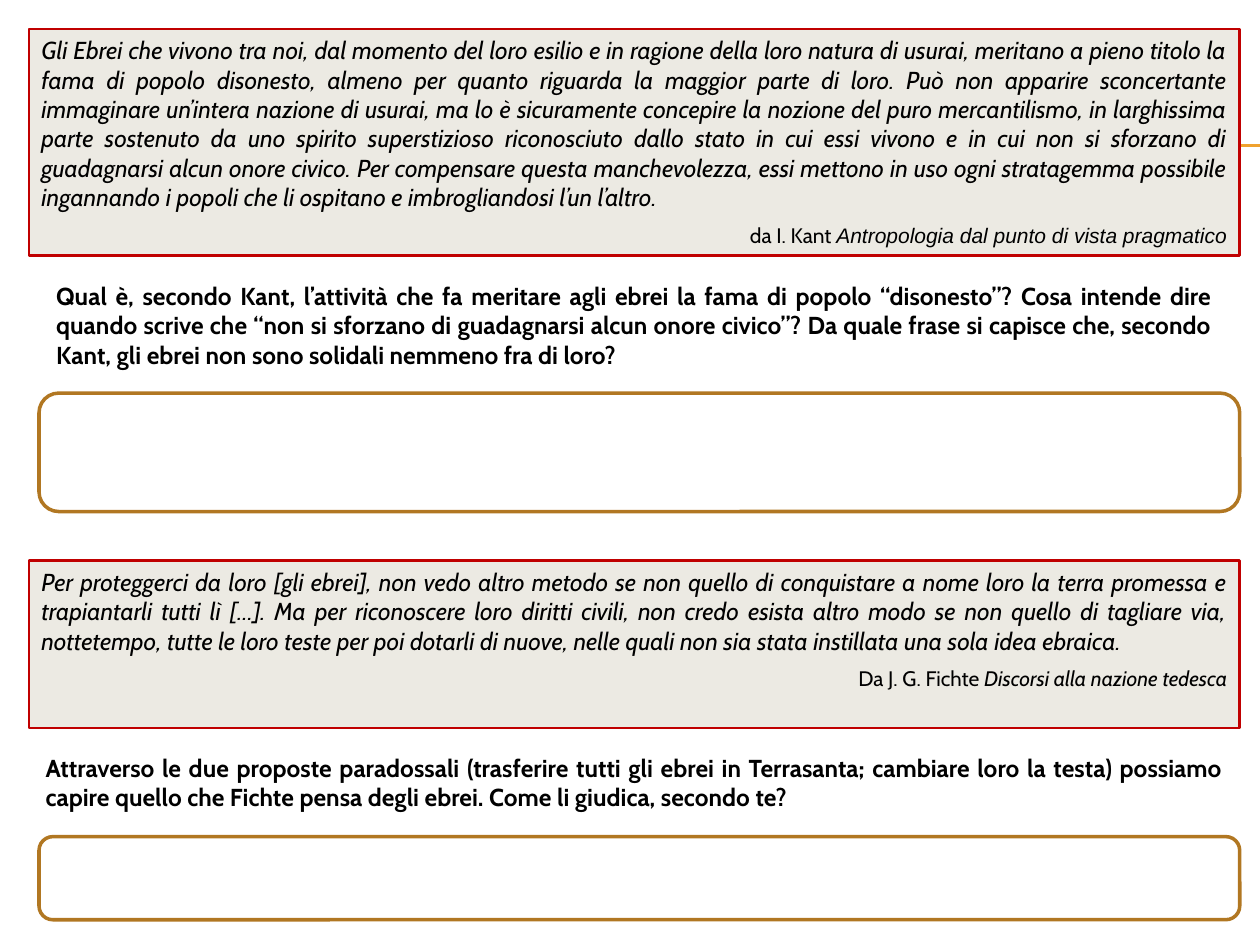
from dataclasses import dataclass

from lxml.etree import SubElement
from pptx import Presentation
from pptx.dml.color import RGBColor
from pptx.enum.shapes import MSO_CONNECTOR, MSO_SHAPE
from pptx.enum.text import MSO_ANCHOR, PP_ALIGN
from pptx.oxml.ns import qn
from pptx.util import Inches, Pt

BLACK = RGBColor(0x00, 0x00, 0x00)
WHITE = RGBColor(0xFF, 0xFF, 0xFF)
BEIGE = RGBColor(0xEC, 0xEA, 0xE3)
RED = RGBColor(0xC0, 0x00, 0x00)
BROWN = RGBColor(0xB1, 0x77, 0x22)
AMBER = RGBColor(0xF0, 0xA2, 0x2E)

QUOTE = {"name": "Cabin", "size": Pt(14), "italic": True}
QUESTION = {"name": "Cabin", "size": Pt(14), "bold": True}
AUTHOR = {"name": "Cabin", "size": Pt(12), "italic": False}


@dataclass
class Box:
    left: float
    top: float
    width: float
    height: float


@dataclass
class Exercise:
    quote_box: Box
    quote: str
    author: str
    work: str
    work_font: str
    question_box: Box
    question: str
    answer_box: Box


EXERCISES = [
    Exercise(
        Box(0.23, 0.23, 9.61, 1.8),
        "Gli Ebrei che vivono tra noi, dal momento del loro esilio e in ragione della loro "
        "natura di usurai, meritano a pieno titolo la fama di popolo disonesto, almeno per "
        "quanto riguarda la maggior parte di loro. Può non apparire sconcertante immaginare "
        "un’intera nazione di usurai, ma lo è sicuramente concepire la nozione del puro "
        "mercantilismo, in larghissima parte sostenuto da uno spirito superstizioso "
        "riconosciuto dallo stato in cui essi vivono e in cui non si sforzano di guadagnarsi "
        "alcun onore civico. Per compensare questa manchevolezza, essi mettono in uso ogni "
        "stratagemma possibile ingannando i popoli che li ospitano e imbrogliandosi l’un "
        "l’altro.",
        "da I. Kant ",
        "Antropologia dal punto di vista pragmatico",
        "Arial",
        Box(0.31, 2.19, 9.45, 0.78),
        "Qual è, secondo Kant, l’attività che fa meritare agli ebrei la fama di popolo "
        "“disonesto”? Cosa intende dire quando scrive che “non si sforzano di guadagnarsi "
        "alcun onore civico”? Da quale frase si capisce che, secondo Kant, gli ebrei non "
        "sono solidali nemmeno fra di loro?",
        Box(0.31, 3.12, 9.53, 0.94),
    ),
    Exercise(
        Box(0.23, 4.45, 9.61, 1.33),
        "Per proteggerci da loro [gli ebrei], non vedo altro metodo se non quello di "
        "conquistare a nome loro la terra promessa e trapiantarli tutti lì […]. Ma per "
        "riconoscere loro diritti civili, non credo esista altro modo se non quello di "
        "tagliare via, nottetempo, tutte le loro teste per poi dotarli di nuove, nelle "
        "quali non sia stata instillata una sola idea ebraica.",
        "Da J. G. Fichte ",
        "Discorsi alla nazione tedesca",
        "Cabin",
        Box(0.23, 5.86, 9.61, 0.7),
        "Attraverso le due proposte paradossali (trasferire tutti gli ebrei in Terrasanta; "
        "cambiare loro la testa) possiamo capire quello che Fichte pensa degli ebrei. Come "
        "li giudica, secondo te?",
        Box(0.31, 6.64, 9.53, 0.66),
    ),
]


def add_box(s, kind: MSO_SHAPE, box: Box, fill: RGBColor | None = None,
            line: RGBColor | None = None, weight: float = 0):
    sp = s.shapes.add_shape(kind, Inches(box.left), Inches(box.top),
                            Inches(box.width), Inches(box.height))
    sp.shadow.inherit = False
    if fill is None:
        sp.fill.background()
    else:
        sp.fill.solid()
        sp.fill.fore_color.rgb = fill
    if line is None:
        sp.line.fill.background()
    else:
        sp.line.color.rgb = line
        sp.line.width = Pt(weight)
    return sp


def add_run(p, text: str, fmt: dict) -> None:
    r = p.add_run()
    r.text = text
    r.font.color.rgb = BLACK
    for name, value in fmt.items():
        setattr(r.font, name, value)


def add_quote(s, ex: Exercise) -> None:
    sp = add_box(s, MSO_SHAPE.RECTANGLE, ex.quote_box, BEIGE, RED, 1.5)
    tf = sp.text_frame
    tf.word_wrap = True
    tf.vertical_anchor = MSO_ANCHOR.TOP
    p, source = tf.paragraphs[0], tf.add_paragraph()
    p.alignment, source.alignment = PP_ALIGN.JUSTIFY, PP_ALIGN.RIGHT
    p.space_after = source.space_after = Pt(6)
    add_run(p, ex.quote, QUOTE)
    add_run(source, ex.author, AUTHOR)
    add_run(source, ex.work, AUTHOR | {"name": ex.work_font, "italic": True})


def add_question(s, ex: Exercise) -> None:
    tf = add_box(s, MSO_SHAPE.ROUNDED_RECTANGLE, ex.question_box).text_frame
    tf.word_wrap = True
    tf.vertical_anchor = MSO_ANCHOR.MIDDLE
    p = tf.paragraphs[0]
    p.alignment = PP_ALIGN.JUSTIFY
    add_run(p, ex.question, QUESTION)


def add_rule(s, y: float) -> None:
    """Draw a thin amber line that runs to the right edge of the slide."""
    cn = s.shapes.add_connector(MSO_CONNECTOR.STRAIGHT, Inches(0.56), Inches(y),
                                Inches(10), Inches(y))
    cn.line.color.rgb = AMBER
    cn.line.width = Pt(0.75)
    SubElement(cn._element.spPr, qn("a:effectLst"))


def main() -> None:
    prs = Presentation()
    prs.slide_width, prs.slide_height = Inches(10), Inches(7.5)
    s = prs.slides.add_slide(prs.slide_layouts[6])
    for y in (1.15, 1.16):
        add_rule(s, y)
    for ex in EXERCISES:
        add_quote(s, ex)
        add_question(s, ex)
        add_box(s, MSO_SHAPE.ROUNDED_RECTANGLE, ex.answer_box, WHITE, BROWN, 2)
    prs.save("out.pptx")


if __name__ == "__main__":
    main()
